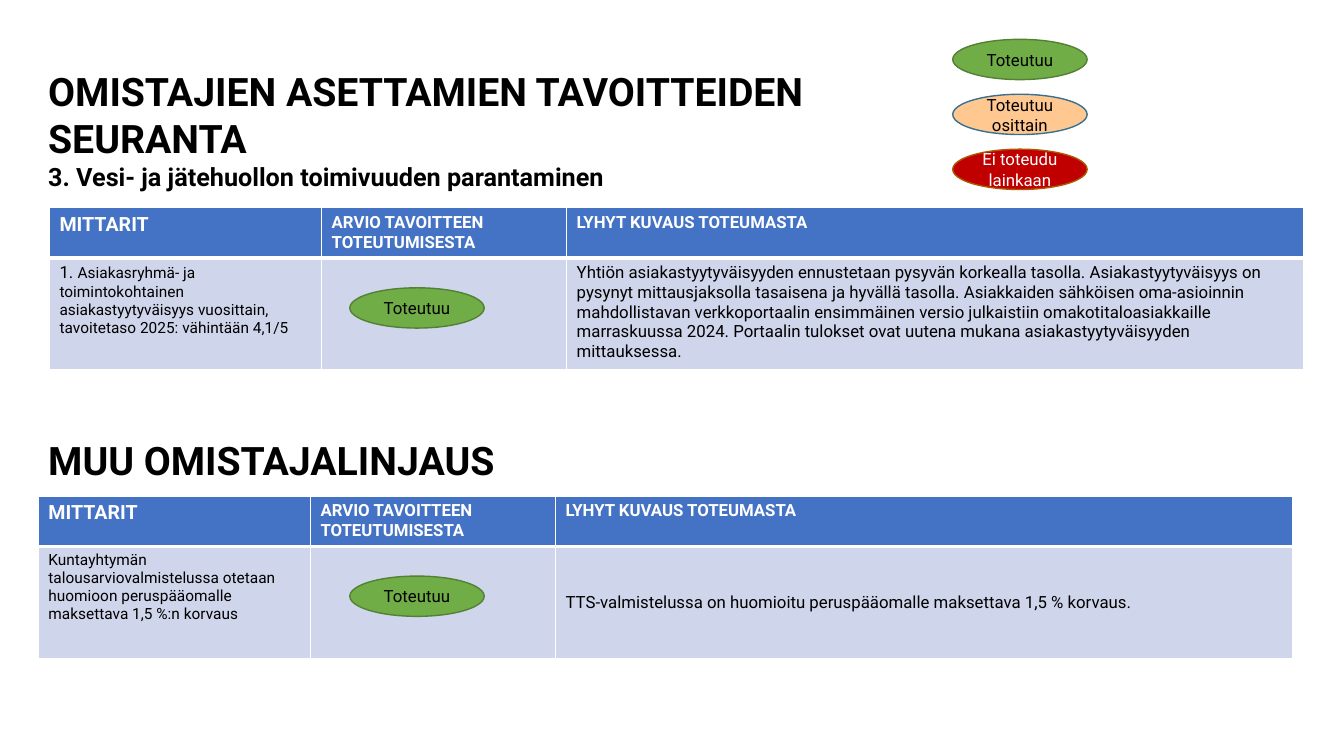
from lxml import etree
from pptx import Presentation
from pptx import util as u
from pptx.dml.color import RGBColor
from pptx.enum import shapes, text
from pptx.oxml.ns import qn

presentation = Presentation()
presentation.slide_width = u.Inches(13.33)
presentation.slide_height = u.Inches(7.5)
slide = presentation.slides.add_slide(presentation.slide_layouts[6])
column = presentation.slide_width / 100
row = presentation.slide_height / 100


def color(value):
    return RGBColor.from_string(value)


def add_run(paragraph, words, size, ink="000000", bold=False):
    run = paragraph.add_run()
    run.text = words
    run.font.name = "Roboto"
    run.font.size = u.Pt(size)
    run.font.bold = bold
    run.font.color.rgb = color(ink)


headings = [
    (8.27, 17, [("OMISTAJIEN ASETTAMIEN TAVOITTEIDEN SEURANTA", 28),
                ("3. Vesi- ja jätehuollon toimivuuden parantaminen", 18)]),
    (57.07, 8, [("MUU OMISTAJALINJAUS", 28)]),
]
for top, height, lines in headings:
    shape = slide.shapes.add_textbox(
        int(2.85 * column), int(top * row), int(66 * column), int(height * row))
    frame = shape.text_frame
    frame.word_wrap = True
    for index, (words, size) in enumerate(lines):
        paragraph = frame.add_paragraph() if index else frame.paragraphs[0]
        add_run(paragraph, words, size, bold=True)

column_widths = [20.25, 18.23, 54.84]
row_heights = [6.5, 14.8]
header = [[("MITTARIT", 14)], [("ARVIO TAVOITTEEN TOTEUTUMISESTA", 12)],
          [("LYHYT KUVAUS TOTEUMASTA", 12)]]
tables = [
    (3.68, 27.47, text.MSO_ANCHOR.TOP, [
        [("1. ", 12),
         ("Asiakasryhmä- ja toimintokohtainen asiakastyytyväisyys vuosittain, "
          "tavoitetaso 2025: vähintään 4,1/5", 11)],
        [],
        [("Yhtiön asiakastyytyväisyyden ennustetaan pysyvän korkealla tasolla. "
          "Asiakastyytyväisyys on pysynyt mittausjaksolla tasaisena ja hyvällä tasolla. "
          "Asiakkaiden sähköisen oma-asioinnin mahdollistavan verkkoportaalin "
          "ensimmäinen versio julkaistiin omakotitaloasiakkaille marraskuussa 2024. "
          "Portaalin tulokset ovat uutena mukana asiakastyytyväisyyden mittauksessa.", 12)],
    ]),
    (2.85, 65.6, text.MSO_ANCHOR.MIDDLE, [
        [("Kuntayhtymän talousarviovalmistelussa otetaan huomioon peruspääomalle "
          "maksettava 1,5 %:n korvaus", 11)],
        [],
        [("TTS-valmistelussa on huomioitu peruspääomalle maksettava 1,5 % korvaus.", 12)],
    ]),
]
row_styles = [("4472C4", "FFFFFF", True, {"lnL": 1, "lnR": 1, "lnT": 1, "lnB": 3}),
              ("CFD5EA", "000000", False, {"lnL": 1, "lnR": 1, "lnT": 3, "lnB": 1})]
for left, top, description_anchor, body in tables:
    table = slide.shapes.add_table(
        2, 3, int(left * column), int(top * row),
        int(sum(column_widths) * column), int(sum(row_heights) * row)).table
    for table_column, width in zip(table.columns, column_widths):
        table_column.width = int(width * column)
    for table_row, height, contents, style in zip(
            table.rows, row_heights, [header, body], row_styles):
        fill, ink, bold, borders = style
        table_row.height = int(height * row)
        for cell, runs in zip(table_row.cells, contents):
            for words, size in runs:
                add_run(cell.text_frame.paragraphs[0], words, size, ink, bold)
            properties = cell._tc.get_or_add_tcPr()
            for side, points in borders.items():
                border = etree.SubElement(properties, qn("a:" + side), w=str(u.Pt(points)))
                solid = etree.SubElement(border, qn("a:solidFill"))
                etree.SubElement(solid, qn("a:srgbClr"), val="FFFFFF")
            cell.fill.solid()
            cell.fill.fore_color.rgb = color(fill)
    table.cell(1, 2).vertical_anchor = description_anchor

done = ("Toteutuu", "70AD47", "538035", "000000")
partly = ("Toteutuu osittain", "FFC891", "397090", "000000")
missed = ("Ei toteudu lainkaan", "C00000", "AD5700", "FFFFFF")
ratings = [(70.89, 5.2 + 7.27 * index, rating)
           for index, rating in enumerate([done, partly, missed])]
ratings += [(26.03, top + 10.6, done) for left, top, anchor, body in tables]
for left, top, (words, fill, outline, ink) in ratings:
    shape = slide.shapes.add_shape(
        shapes.MSO_SHAPE.FLOWCHART_CONNECTOR,
        int(left * column), int(top * row), int(10 * column), int(5.33 * row))
    shape.shadow.inherit = False
    shape.fill.solid()
    shape.fill.fore_color.rgb = color(fill)
    shape.line.color.rgb = color(outline)
    shape.line.width = u.Pt(1)
    frame = shape.text_frame
    frame.word_wrap = True
    frame.margin_left = frame.margin_right = u.Inches(0.05)
    frame.vertical_anchor = text.MSO_ANCHOR.MIDDLE
    frame.paragraphs[0].alignment = text.PP_ALIGN.CENTER
    add_run(frame.paragraphs[0], words, 12, ink)

presentation.save("out.pptx")
